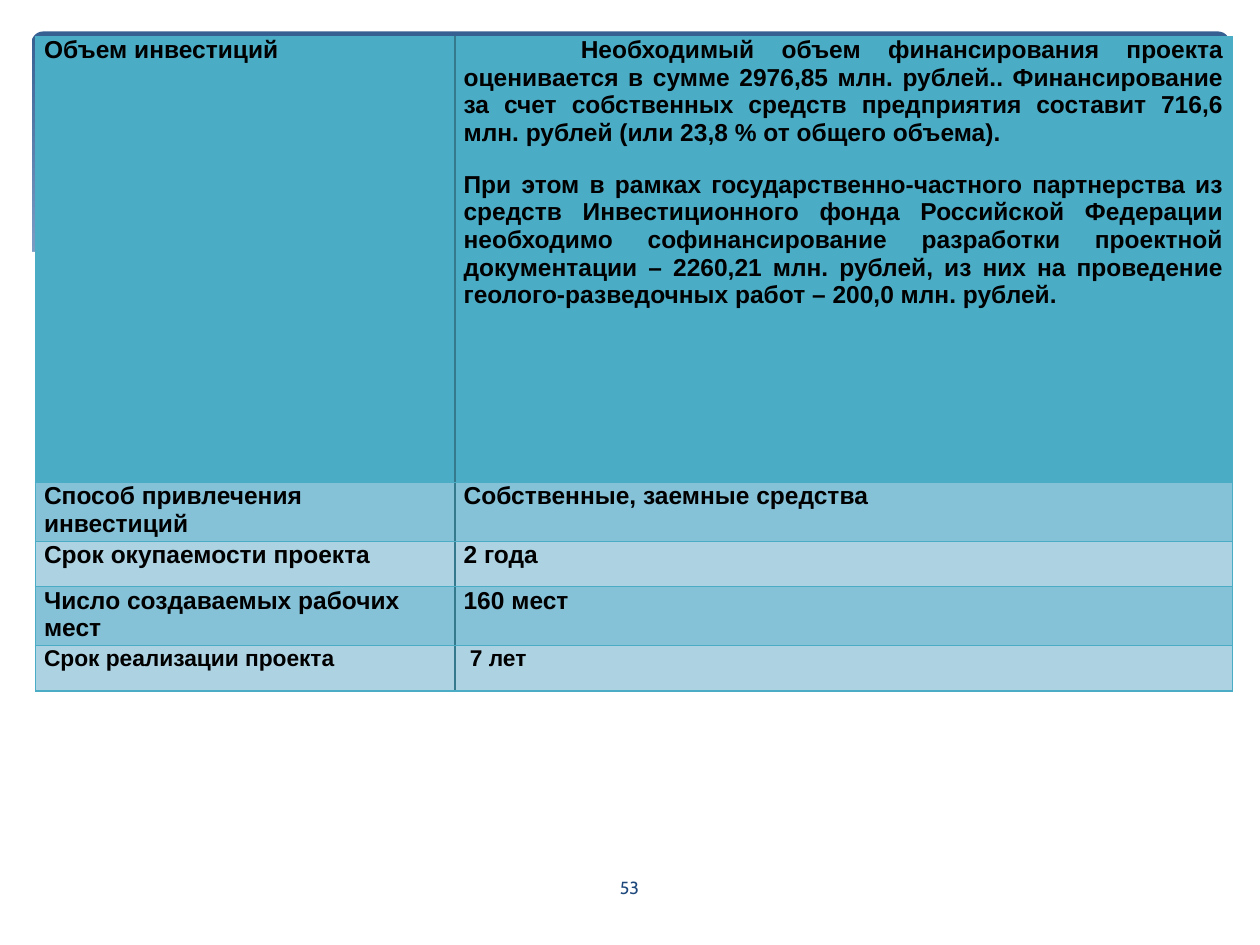
from lxml import etree
from pptx import Presentation
from pptx import util as u
from pptx.dml import color as col
from pptx.enum import shapes, text
from pptx.oxml import ns

HUES = {
    "top": "376092", "end": "95B3D7", "white": "FFFFFF", "black": "000000",
    "head": "4BACC6", "dark": "85C2D8", "light": "ADD3E3",
    "rule": "35798C", "page": "1F497D",
}
ROWS = [
    ("Объем инвестиций", [
        "Необходимый объем финансирования проекта оценивается в сумме 2976,85 млн. рублей.. "
        "Финансирование за счет собственных средств предприятия составит 716,6 млн. рублей "
        "(или 23,8 % от общего объема).",
        "При этом в рамках государственно-частного партнерства из средств Инвестиционного "
        "фонда Российской Федерации необходимо софинансирование разработки проектной "
        "документации – 2260,21 млн. рублей, из них на проведение геолого-разведочных "
        "работ – 200,0 млн. рублей."], 3.54, "head", 14),
    ("Способ привлечения инвестиций", ["Собственные, заемные средства"], 0.44, "dark", 14),
    ("Срок окупаемости проекта", ["2 года"], 0.36, "light", 14),
    ("Число создаваемых рабочих мест", ["160 мест"], 0.44, "dark", 14),
    ("Срок реализации проекта", ["7 лет"], 0.36, "light", 13),
]
COLS = [3.33, 6.17]
WAVE = [
    (9.77, 2.46), (9.4, 2.59), (8.99, 2.69), (8.5, 2.75), (8.09, 2.77),
    (7.44, 2.74), (6.68, 2.65), (5.79, 2.5), (5.03, 2.33), (4.18, 2.13),
    (3.4, 1.97), (2.71, 1.88), (2.11, 1.84), (1.61, 1.84), (1.06, 1.89),
    (0.67, 1.97), (0.36, 2.07), (0.23, 2.13), (0.23, 3.29), (9.77, 3.29),
]


def rgb(name):
    """Return a named colour."""
    return col.RGBColor.from_string(HUES[name])


def style(para, size, hue, font, bold=False):
    """Format every run of a paragraph."""
    for run in para.runs:
        run.font.size, run.font.bold, run.font.name = u.Pt(size), bold, font
        run.font.color.rgb = rgb(hue)


def add_panel(slide):
    """Draw the rounded gradient panel."""
    panel = slide.shapes.add_shape(
        shapes.MSO_SHAPE.ROUNDED_RECTANGLE,
        u.Inches(0.25), u.Inches(0.25), u.Inches(9.51), u.Inches(2.7))
    panel.adjustments[0] = 0.034
    panel.shadow.inherit = False
    panel.line.fill.background()
    panel.fill.gradient()
    panel.fill.gradient_angle = 270
    for stop, hue, pos in zip(panel.fill.gradient_stops, ("top", "end"), (0, 0.9)):
        stop.color.rgb, stop.position = rgb(hue), pos


def add_wave(slide):
    """Draw the white wave over the foot of the panel."""
    pen = slide.shapes.build_freeform(*WAVE[0], scale=u.Inches(1))
    pen.add_line_segments(WAVE[1:], close=True)
    wave = pen.convert_to_shape()
    wave.shadow.inherit = False
    wave.fill.solid()
    wave.fill.fore_color.rgb = rgb("white")
    wave.line.fill.background()


def add_edges(cell, first):
    """Rule the four sides of a table cell."""
    props = cell._tc.get_or_add_tcPr()
    inner = "R" if first else "L"
    for spot, side in enumerate("LRTB"):
        hue, width = ("rule", 1.25) if side == inner else ("head", 0.75)
        line = etree.Element(ns.qn(f"a:ln{side}"), w=str(u.Pt(width)))
        fill = etree.SubElement(line, ns.qn("a:solidFill"))
        etree.SubElement(fill, ns.qn("a:srgbClr"), val=HUES[hue])
        props.insert(spot, line)


def fill_cell(cell, paras, hue, size, first):
    """Write and format one table cell."""
    cell.margin_left = cell.margin_right = u.Inches(0.07)
    cell.margin_top = cell.margin_bottom = 0
    cell.fill.solid()
    cell.fill.fore_color.rgb = rgb(hue)
    add_edges(cell, first)
    cell.text_frame.text = "\n".join(paras)
    for num, para in enumerate(cell.text_frame.paragraphs):
        para.alignment = text.PP_ALIGN.LEFT if first else text.PP_ALIGN.JUSTIFY
        if num:
            para.space_before = u.Pt(14)
        style(para, size, "black", "Arial", True)


def indent(cell, width):
    """Indent the first line of a cell."""
    props = cell.text_frame.paragraphs[0]._p.get_or_add_pPr()
    props.set("marL", "0")
    props.set("indent", str(u.Inches(width)))


def add_grid(slide):
    """Build the table of project terms."""
    high = sum(row[2] for row in ROWS)
    grid = slide.shapes.add_table(
        len(ROWS), len(COLS), u.Inches(0.28), u.Inches(0.29),
        u.Inches(sum(COLS)), u.Inches(high)).table
    grid.first_row = grid.horz_banding = False
    for column, width in zip(grid.columns, COLS):
        column.width = u.Inches(width)
    for num, (label, paras, height, hue, size) in enumerate(ROWS):
        grid.rows[num].height = u.Inches(height)
        fill_cell(grid.cell(num, 0), [label], hue, size, True)
        fill_cell(grid.cell(num, 1), paras, hue, size, False)
    indent(grid.cell(0, 1), 0.93)
    indent(grid.cell(len(ROWS) - 1, 1), 0.05)


def add_page(slide):
    """Add the page number."""
    frame = slide.shapes.add_textbox(
        u.Inches(4.36), u.Inches(6.84), u.Inches(1.27), u.Inches(0.4)).text_frame
    frame.word_wrap = True
    frame.vertical_anchor = text.MSO_ANCHOR.MIDDLE
    frame.text = "53"
    frame.paragraphs[0].alignment = text.PP_ALIGN.CENTER
    style(frame.paragraphs[0], 10, "page", "Cabin")


def main():
    """Build and save the slide."""
    deck = Presentation()
    deck.slide_width, deck.slide_height = u.Inches(10), u.Inches(7.5)
    slide = deck.slides.add_slide(deck.slide_layouts[6])
    add_panel(slide)
    add_wave(slide)
    add_page(slide)
    add_grid(slide)
    deck.save("out.pptx")


if __name__ == "__main__":
    main()
